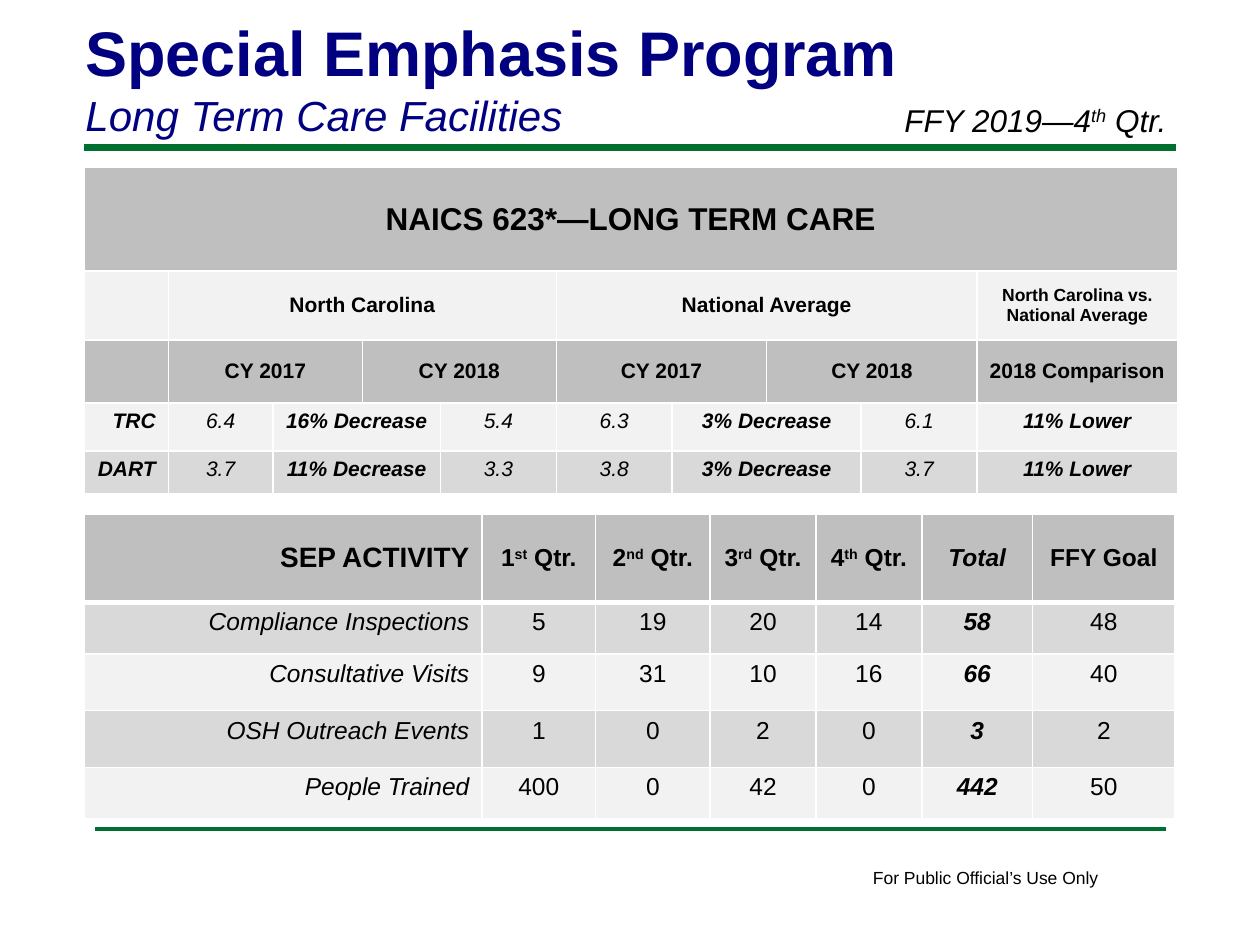
from dataclasses import dataclass

from lxml.etree import SubElement
from pptx import Presentation
from pptx.dml.color import RGBColor
from pptx.enum.shapes import MSO_CONNECTOR
from pptx.enum.text import MSO_ANCHOR, MSO_AUTO_SIZE, PP_ALIGN
from pptx.oxml import parse_xml
from pptx.oxml.ns import nsdecls, qn
from pptx.util import Inches, Pt

WIDTH, HEIGHT = 10, 7.5
MARGIN = WIDTH / 15
GREEN = RGBColor(0x00, 0x70, 0x30)
NAVY = RGBColor(0x00, 0x00, 0x80)
BLACK = RGBColor(0x00, 0x00, 0x00)
WHITE = RGBColor(0xFF, 0xFF, 0xFF)
HEADER_GRAY = RGBColor(0xBF, 0xBF, 0xBF)
MID_GRAY = RGBColor(0xD9, 0xD9, 0xD9)
PALE_GRAY = RGBColor(0xF2, 0xF2, 0xF2)


@dataclass(frozen=True)
class Style:
    size: int
    bold: bool = False
    italic: bool = False
    color: RGBColor = BLACK
    align: PP_ALIGN = PP_ALIGN.CENTER


@dataclass(frozen=True)
class Cell:
    text: str
    style: Style
    columns: int = 1


@dataclass(frozen=True)
class Row:
    height: float
    fill: RGBColor
    cells: list[Cell]
    anchor: MSO_ANCHOR = MSO_ANCHOR.TOP
    top_border: int = 1
    bottom_border: int = 1


def write(paragraph, text: str, style: Style) -> None:
    """Fill a paragraph; text between ^ marks is superscript."""
    paragraph.alignment = style.align
    for index, part in enumerate(text.split("^")):
        if not part:
            continue
        run = paragraph.add_run()
        run.text = part
        run.font.name = "Arial"
        run.font.size = Pt(style.size)
        run.font.bold = style.bold
        run.font.italic = style.italic
        run.font.color.rgb = style.color
        if index % 2:
            run.font._element.set("baseline", "30000")


def add_text(slide, box: tuple, lines: list[tuple[str, Style]], wrap: bool = True) -> None:
    shape = slide.shapes.add_textbox(*(Inches(length) for length in box))
    text_frame = shape.text_frame
    text_frame.word_wrap = wrap
    text_frame.auto_size = MSO_AUTO_SIZE.SHAPE_TO_FIT_TEXT
    for index, (text, style) in enumerate(lines):
        paragraph = text_frame.add_paragraph() if index else text_frame.paragraphs[0]
        write(paragraph, text, style)


def add_rule(slide, inset: float, top: float, weight: int) -> None:
    line = slide.shapes.add_connector(
        MSO_CONNECTOR.STRAIGHT, Inches(inset), Inches(top), Inches(WIDTH - inset), Inches(top))
    line.line.color.rgb = GREEN
    line.line.width = Pt(weight)
    SubElement(line._element.spPr, qn("a:effectLst"))


def set_borders(cell, row: Row) -> None:
    properties = cell._tc.get_or_add_tcPr()
    weights = {"lnL": 1, "lnR": 1, "lnT": row.top_border, "lnB": row.bottom_border}
    for index, (side, weight) in enumerate(weights.items()):
        properties.insert(index, parse_xml(
            f'<a:{side} {nsdecls("a")} w="{Pt(weight)}"><a:solidFill>'
            f'<a:srgbClr val="{WHITE}"/></a:solidFill></a:{side}>'))


def add_table(slide, top: float, widths: list[float], rows: list[Row]) -> None:
    height = sum(row.height for row in rows)
    table = slide.shapes.add_table(
        len(rows), len(widths), Inches(MARGIN), Inches(top),
        Inches(sum(widths)), Inches(height)).table
    table.first_row = table.horz_banding = False
    for column, width in zip(table.columns, widths):
        column.width = Inches(width)
    for row_index, row in enumerate(rows):
        table.rows[row_index].height = Inches(row.height)
        for column_index in range(len(widths)):
            cell = table.cell(row_index, column_index)
            cell.fill.solid()
            cell.fill.fore_color.rgb = row.fill
            set_borders(cell, row)
        start = 0
        for entry in row.cells:
            cell = table.cell(row_index, start)
            if entry.columns > 1:
                cell.merge(table.cell(row_index, start + entry.columns - 1))
            cell.vertical_anchor = row.anchor
            write(cell.text_frame.paragraphs[0], entry.text, entry.style)
            start += entry.columns


# Rates table
BANNER = Style(18, bold=True)
HEADING = Style(12, bold=True)
SMALL_HEADING = Style(10, bold=True)
RATE = Style(12, italic=True)
CHANGE = Style(12, bold=True, italic=True)
RATE_LABEL = Style(12, bold=True, italic=True, align=PP_ALIGN.RIGHT)

RATE_WIDTHS = [0.67, 0.83, 0.71, 0.62, 0.92, 0.92, 0.75, 0.75, 0.92, 1.59]


def rate_row(height: float, fill: RGBColor, label: str, *values: str) -> Row:
    styles = [RATE, CHANGE, RATE] * 2 + [CHANGE]
    spans = [1, 2, 1] * 2 + [1]
    cells = [Cell(*entry) for entry in zip(values, styles, spans)]
    return Row(height, fill, [Cell(label, RATE_LABEL), *cells])


RATE_ROWS = [
    Row(0.82, HEADER_GRAY, [Cell("NAICS 623*—LONG TERM CARE", BANNER, 10)], MSO_ANCHOR.MIDDLE),
    Row(0.55, PALE_GRAY, [
        Cell("", HEADING),
        Cell("North Carolina", HEADING, 4),
        Cell("National Average", HEADING, 4),
        Cell("North Carolina vs. National Average", SMALL_HEADING),
    ], MSO_ANCHOR.MIDDLE),
    Row(0.5, HEADER_GRAY, [
        Cell("", HEADING),
        *[Cell(year, HEADING, 2) for year in ["CY 2017", "CY 2018"] * 2],
        Cell("2018 Comparison", HEADING),
    ], MSO_ANCHOR.MIDDLE),
    rate_row(0.38, PALE_GRAY, "TRC", "6.4", "16% Decrease", "5.4",
             "6.3", "3% Decrease", "6.1", "11% Lower"),
    rate_row(0.34, MID_GRAY, "DART", "3.7", "11% Decrease", "3.3",
             "3.8", "3% Decrease", "3.7", "11% Lower"),
]

# Activity table
ACTIVITY_TITLE = Style(16, bold=True, align=PP_ALIGN.RIGHT)
ACTIVITY_HEADING = Style(14, bold=True)
ACTIVITY_LABEL = Style(14, italic=True, align=PP_ALIGN.RIGHT)
COUNT = Style(14)
TOTAL = Style(14, bold=True, italic=True)

ACTIVITY_WIDTHS = [3.16, 0.9, 0.91, 0.84, 0.84, 0.88, 1.13]
QUARTERS = ["1^st^ Qtr.", "2^nd^ Qtr.", "3^rd^ Qtr.", "4^th^ Qtr."]
ACTIVITIES = [
    (0.41, "Compliance Inspections", [5, 19, 20, 14], 48),
    (0.45, "Consultative Visits", [9, 31, 10, 16], 40),
    (0.45, "OSH Outreach Events", [1, 0, 2, 0], 2),
    (0.41, "People Trained", [400, 0, 42, 0], 50),
]


def activity_rows() -> list[Row]:
    header = Row(0.7, HEADER_GRAY, [
        Cell("SEP ACTIVITY", ACTIVITY_TITLE),
        *[Cell(quarter, ACTIVITY_HEADING) for quarter in QUARTERS],
        Cell("Total", TOTAL),
        Cell("FFY Goal", ACTIVITY_HEADING),
    ], MSO_ANCHOR.MIDDLE, bottom_border=3)
    rows = [header]
    for index, (height, label, counts, goal) in enumerate(ACTIVITIES):
        cells = [Cell(label, ACTIVITY_LABEL)]
        cells += [Cell(str(count), COUNT) for count in counts]
        cells += [Cell(str(sum(counts)), TOTAL), Cell(str(goal), COUNT)]
        fill = PALE_GRAY if index % 2 else MID_GRAY
        rows.append(Row(height, fill, cells, top_border=1 if index else 3))
    return rows


def main() -> None:
    presentation = Presentation()
    presentation.slide_width, presentation.slide_height = Inches(WIDTH), Inches(HEIGHT)
    slide = presentation.slides.add_slide(presentation.slide_layouts[6])

    # Rules and footer
    add_rule(slide, MARGIN, 1.17, 4)
    add_rule(slide, 0.75, 6.58, 2)
    add_text(slide, (6.83, 6.83, 2.01, 0.27),
             [("For Public Official’s Use Only", Style(10, align=PP_ALIGN.LEFT))], wrap=False)

    # Title and period
    add_text(slide, (0.58, 0.06, 8.25, 1.11), [
        ("Special Emphasis Program", Style(36, bold=True, color=NAVY, align=PP_ALIGN.LEFT)),
        ("Long Term Care Facilities", Style(24, italic=True, color=NAVY, align=PP_ALIGN.LEFT)),
    ])
    add_text(slide, (7.08, 0.75, 2.5, 0.4),
             [("FFY 2019—4^th^ Qtr.", Style(18, italic=True, align=PP_ALIGN.LEFT))])

    # Tables
    add_table(slide, 1.33, RATE_WIDTHS, RATE_ROWS)
    add_table(slide, 4.08, ACTIVITY_WIDTHS, activity_rows())
    presentation.save("out.pptx")


if __name__ == "__main__":
    main()
